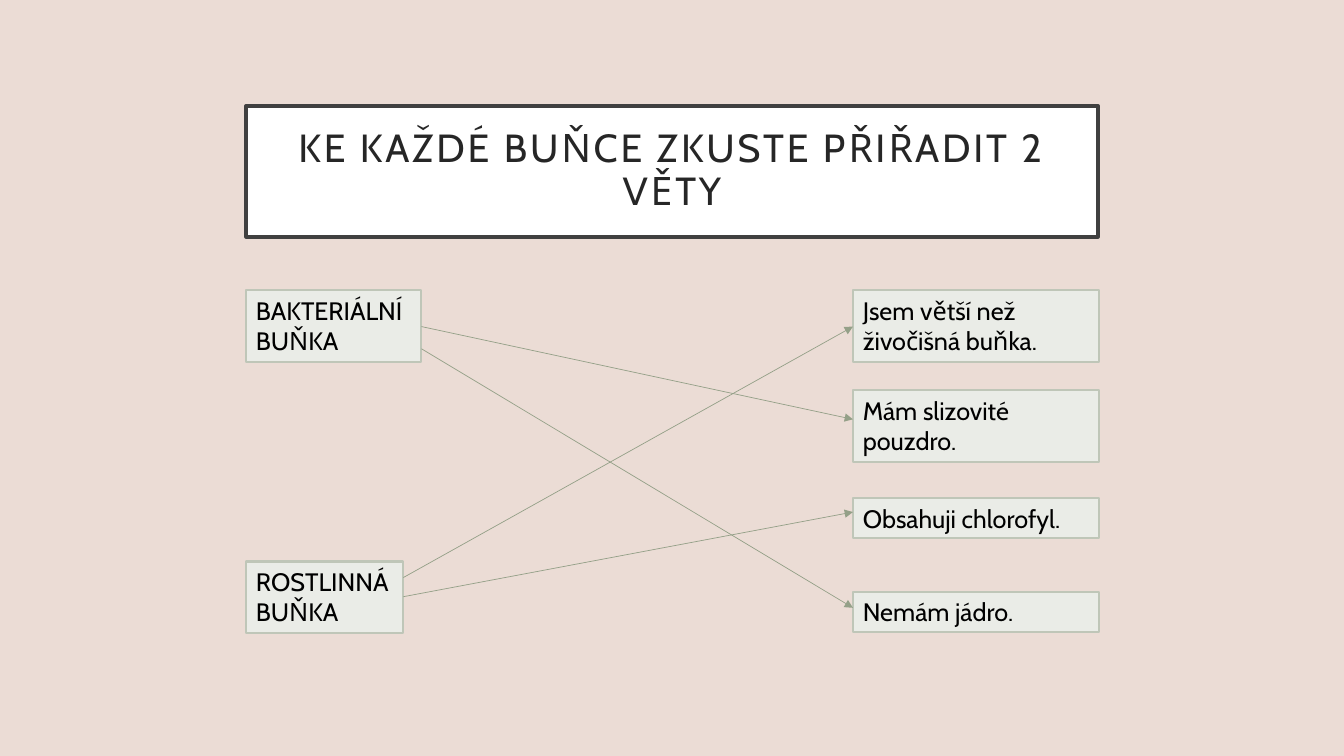
from dataclasses import dataclass

from lxml import etree
from pptx import Presentation
from pptx.dml.color import RGBColor
from pptx.enum import shapes, text
from pptx.oxml import ns
from pptx.util import Inches, Pt

FONT = "Cabin"
LEFT, RIGHT = 2.44, 8.46
ONE_LINE, TWO_LINES = 0.4, 0.71
SENTENCE_WIDTH = 2.44


@dataclass
class Label:
    wording: str
    left: float
    top: float
    width: float
    height: float


@dataclass
class Match:
    cell: Label
    start_y: float
    sentence: Label
    end_y: float


BACTERIA = Label("BAKTERIÁLNÍ BUŇKA", LEFT, 2.88, 1.74, TWO_LINES)
PLANT = Label("ROSTLINNÁ BUŇKA", LEFT, 5.57, 1.56, TWO_LINES)
LARGER = Label("Jsem větší než živočišná buňka.", RIGHT, 2.88, SENTENCE_WIDTH, TWO_LINES)
CAPSULE = Label("Mám slizovité pouzdro.", RIGHT, 3.87, SENTENCE_WIDTH, TWO_LINES)
CHLOROPHYLL = Label("Obsahuji chlorofyl.", RIGHT, 4.94, SENTENCE_WIDTH, ONE_LINE)
NO_NUCLEUS = Label("Nemám jádro.", RIGHT, 5.87, SENTENCE_WIDTH, ONE_LINE)

LABELS = [BACTERIA, PLANT, LARGER, CAPSULE, CHLOROPHYLL, NO_NUCLEUS]
MATCHES = [
    Match(BACTERIA, 3.24, CAPSULE, 4.16),
    Match(BACTERIA, 3.46, NO_NUCLEUS, 6.03),
    Match(PLANT, 5.73, LARGER, 3.24),
    Match(PLANT, 5.92, CHLOROPHYLL, 5.08),
]


def paint(color_format, color: str) -> None:
    color_format.rgb = RGBColor.from_string(color)


def frame(shape, fill: str, line: str, weight: float) -> None:
    """Give a shape a solid fill and an outline."""
    shape.fill.solid()
    paint(shape.fill.fore_color, fill)
    paint(shape.line.color, line)
    shape.line.width = Pt(weight)


def add_span(para, wording: str, size: float, color: str):
    span = para.add_run()
    span.text = wording
    span.font.name = FONT
    span.font.size = Pt(size)
    paint(span.font.color, color)
    return span


def add_title(page) -> None:
    title = page.shapes.title
    title.left, title.top = Inches(LEFT), Inches(1.05)
    title.width, title.height = Inches(8.45), Inches(1.3)
    frame(title, "FFFFFF", "404040", 2.5)
    body = title.text_frame
    body.word_wrap = True
    body.auto_size = text.MSO_AUTO_SIZE.NONE
    body.vertical_anchor = text.MSO_ANCHOR.MIDDLE
    body.margin_left = body.margin_right = Inches(0.2)
    body.margin_top = body.margin_bottom = Inches(0.2)
    para = body.paragraphs[0]
    para.alignment = text.PP_ALIGN.CENTER
    para.line_spacing = 0.9
    span = add_span(para, "KE KAŽDÉ BUŇCE ZKUSTE PŘIŘADIT 2 VĚTY", 28, "262626")
    span.font._element.set("spc", "200")


def add_label(page, label: Label) -> None:
    box = page.shapes.add_textbox(
        Inches(label.left), Inches(label.top), Inches(label.width), Inches(label.height)
    )
    frame(box, "EAECE7", "BFC6B8", 1.5)
    box.text_frame.word_wrap = True
    box.text_frame.auto_size = text.MSO_AUTO_SIZE.SHAPE_TO_FIT_TEXT
    add_span(box.text_frame.paragraphs[0], label.wording, 18, "000000")


def add_arrow(page, match: Match) -> None:
    arrow = page.shapes.add_connector(
        shapes.MSO_CONNECTOR.STRAIGHT,
        Inches(match.cell.left + match.cell.width),
        Inches(match.start_y),
        Inches(match.sentence.left),
        Inches(match.end_y),
    )
    paint(arrow.line.color, "94A088")
    arrow.line.width = Pt(0.5)
    etree.SubElement(arrow.line._get_or_add_ln(), ns.qn("a:tailEnd"), type="triangle")
    etree.SubElement(arrow._element.spPr, ns.qn("a:effectLst"))


def main() -> None:
    deck = Presentation()
    deck.slide_width, deck.slide_height = Inches(13.33), Inches(7.5)
    page = deck.slides.add_slide(deck.slide_layouts[5])
    page.background.fill.solid()
    paint(page.background.fill.fore_color, "EBDCD5")
    add_title(page)
    for label in LABELS:
        add_label(page, label)
    for match in MATCHES:
        add_arrow(page, match)
    deck.save("out.pptx")


if __name__ == "__main__":
    main()
